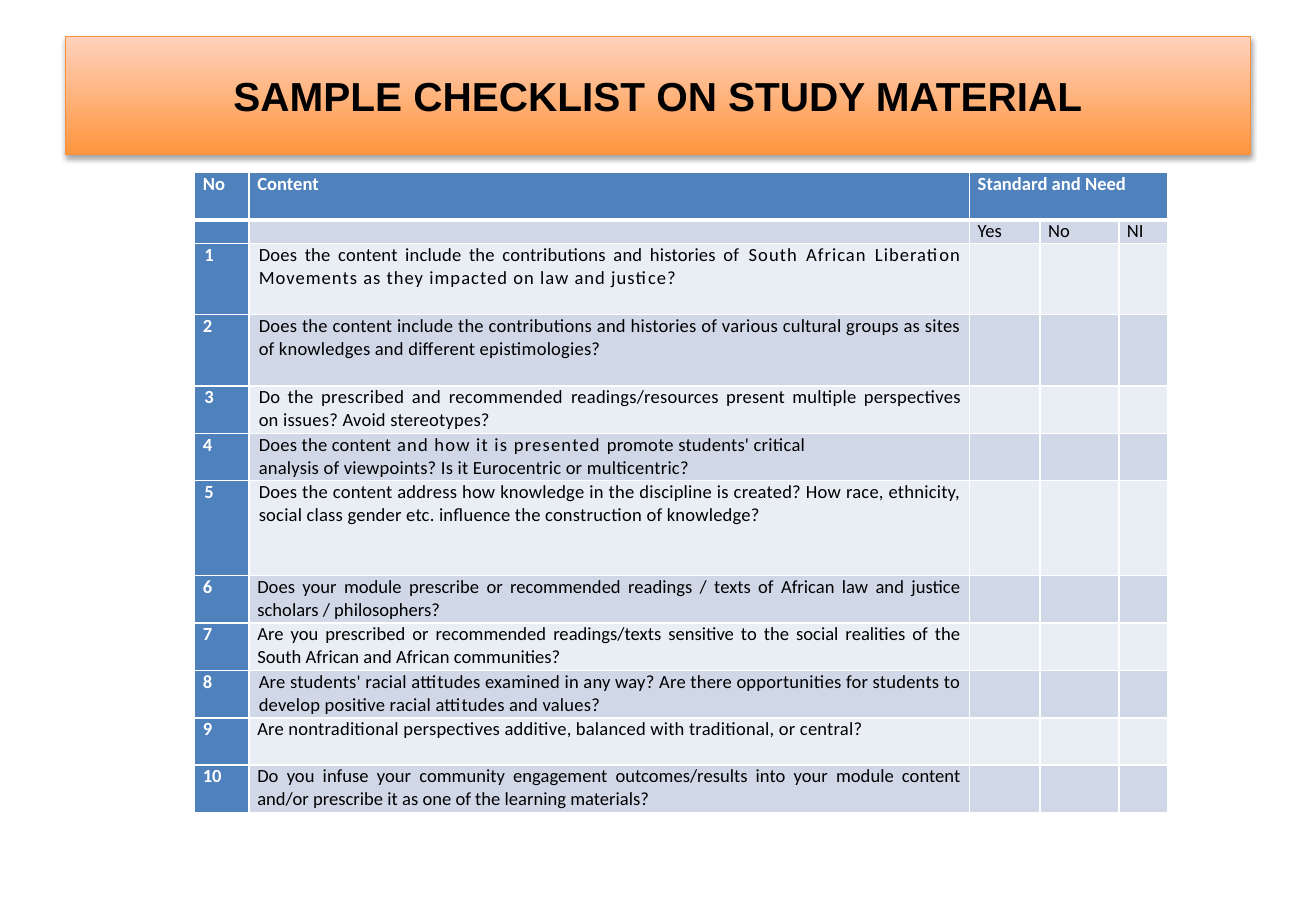
from lxml import etree
from pptx import Presentation
from pptx.dml.color import RGBColor
from pptx.enum.text import MSO_ANCHOR, PP_ALIGN
from pptx.oxml.ns import qn
from pptx.util import Cm, Pt

CENTER, JUSTIFY = PP_ALIGN.CENTER, PP_ALIGN.JUSTIFY
MIDDLE = MSO_ANCHOR.MIDDLE
WHITE, BLACK, BLUE = "FFFFFF", "000000", "4F81BD"
BANDS = ("E9EDF4", "D0D8E8")
COLUMN_WIDTHS = (1.14, 15.06, 1.47, 1.65, 1.02)
ROW_HEIGHTS = (0.99, 0.49, 1.49, 1.49, 0.99, 0.99, 1.99) + (0.99,) * 5
INDENT = 0.03

QUESTIONS = (
    (INDENT, [[("Does the content include the contributions and histories of", 0.1),
               (" South African Liberation Movements as they impacted on law "
                "and justice?", 0.6)]]),
    (INDENT, [[("Does the content include the contributions and histories of various "
                "cultural groups as sites of knowledges and different epistimologies?", 0.1)]]),
    (INDENT, [[("Do the", 0.1), (" prescribed and recommended ", 0.2),
               ("readings/resources present multiple perspectives on issues? "
                "Avoid stereotypes?", 0.1)]]),
    (INDENT, [[("Does the content", 0.1), (" and how it is presented ", 0.7),
               ("promote students' critical", 0.1)],
              [("analysis of viewpoints? Is it Eurocentric or multicentric?", 0.1)]]),
    (INDENT, [[("Does the content address how knowledge in the discipline is created? "
                "How race, ethnicity, social class gender etc. influence the "
                "construction of knowledge?", 0.1)]]),
    (0, [[("Does your module prescribe or recommended readings / texts of African law "
           "and justice scholars / philosophers?", 0)]]),
    (0, [[("Are you prescribed or recommended readings/texts sensitive to the social "
           "realities of the South African and African communities?", 0)]]),
    (INDENT, [[("Are students' racial attitudes examined in any way? Are there "
                "opportunities for students to develop positive racial attitudes "
                "and values?", 0.1)]]),
    (0, [[("Are nontraditional perspectives additive, balanced with traditional, "
           "or central?", 0.1)]]),
    (0, [[("Do you infuse your community engagement outcomes/results into your module "
           "content and/or prescribe it as one of the learning materials?", 0)]]),
)


def rgb(color):
    return RGBColor.from_string(color)


class ChecklistSlide:
    def __init__(self, deck):
        self.page = deck.slides.add_slide(deck.slide_layouts[5])
        self.font = "Calibri"
        self.size = 11

    def span(self, para, text, color, bold=False, spacing=0, size=None, font=None):
        span = para.add_run()
        span.text = text
        span.font.name = font or self.font
        span.font.size = Pt(size or self.size)
        span.font.bold = bold
        span.font.color.rgb = rgb(color)
        if spacing:
            span.font._element.set("spc", str(round(spacing * 100)))

    def shadow(self, shape):
        shape.shadow.inherit = False
        effects = shape._element.spPr.find(qn("a:effectLst"))
        outer = etree.SubElement(effects, qn("a:outerShdw"), blurRad=str(Pt(3.1)),
                                 dist=str(Pt(1.8)), dir="5400000", rotWithShape="0")
        color = etree.SubElement(outer, qn("a:srgbClr"), val=BLACK)
        etree.SubElement(color, qn("a:alpha"), val="35000")

    def title(self, text, left, top, width, height):
        box = self.page.shapes.title
        box.left, box.top, box.width, box.height = map(Cm, (left, top, width, height))
        box.fill.gradient()
        box.fill.gradient_angle = 90
        for stop, color in zip(box.fill.gradient_stops, ("FF953E", "FFD2BD")):
            stop.color.rgb = rgb(color)
        box.line.color.rgb = rgb("F69240")
        box.line.width = Pt(0.75)
        self.shadow(box)
        box.text_frame.vertical_anchor = MIDDLE
        para = box.text_frame.paragraphs[0]
        para.alignment = CENTER
        self.span(para, text, BLACK, bold=True, size=24, font="Arial")

    def table(self, left, top):
        rows, columns = len(ROW_HEIGHTS), len(COLUMN_WIDTHS)
        frame = self.page.shapes.add_table(rows, columns, Cm(left), Cm(top),
                                           Cm(sum(COLUMN_WIDTHS)), Cm(sum(ROW_HEIGHTS)))
        table = frame.table
        table.first_row = table.horz_banding = False
        for column, width in zip(table.columns, COLUMN_WIDTHS):
            column.width = Cm(width)
        for row, height in zip(table.rows, ROW_HEIGHTS):
            row.height = Cm(height)
        for r in range(rows):
            for c in range(columns):
                fill = BLUE if r == 0 or c == 0 else BANDS[r % 2]
                self.cell(table.cell(r, c), fill, 3 if r == 1 else 1, 3 if r == 0 else 1)
        table.cell(0, 2).merge(table.cell(0, 4))
        return table

    def cell(self, cell, fill, top_line, bottom_line):
        cell.margin_left = cell.margin_right = Cm(0.17)
        cell.margin_top = cell.margin_bottom = 0
        properties = cell._tc.get_or_add_tcPr()
        for side, width in zip("LRTB", (1, 1, top_line, bottom_line)):
            line = etree.SubElement(properties, qn(f"a:ln{side}"), w=str(Pt(width)))
            solid = etree.SubElement(line, qn("a:solidFill"))
            etree.SubElement(solid, qn("a:srgbClr"), val=WHITE)
        cell.fill.solid()
        cell.fill.fore_color.rgb = rgb(fill)
        para = cell.text_frame.paragraphs[0]
        etree.SubElement(para._p, qn("a:endParaRPr"), sz=str(self.size * 100))

    def cell_text(self, cell, paragraphs, color, bold=False, indent=0):
        frame = cell.text_frame
        for index, spans in enumerate(paragraphs):
            para = frame.add_paragraph() if index else frame.paragraphs[0]
            para.alignment = JUSTIFY
            para._p.get_or_add_pPr().set("marL", str(Cm(indent)))
            for text, spacing in spans:
                self.span(para, text, color, bold, spacing)


def main():
    deck = Presentation()
    deck.slide_width, deck.slide_height = Cm(27.51), Cm(19.05)
    slide = ChecklistSlide(deck)
    slide.title("SAMPLE CHECKLIST ON STUDY MATERIAL", 1.37, 0.76, 24.77, 2.47)
    table = slide.table(4.07, 3.61)
    for column, label in enumerate(("No", "Content", "Standard and Need")):
        slide.cell_text(table.cell(0, column), [[(label, 0)]], WHITE, bold=True)
    for column, label in enumerate(("Yes", "No", "NI"), 2):
        slide.cell_text(table.cell(1, column), [[(label, 0)]], BLACK)
    for number, (indent, paragraphs) in enumerate(QUESTIONS, 1):
        number_indent = INDENT if number in (1, 3, 5) else 0
        slide.cell_text(table.cell(number + 1, 0), [[(str(number), 0)]], WHITE,
                        bold=True, indent=number_indent)
        slide.cell_text(table.cell(number + 1, 1), paragraphs, BLACK, indent=indent)
    deck.save("out.pptx")


if __name__ == "__main__":
    main()
